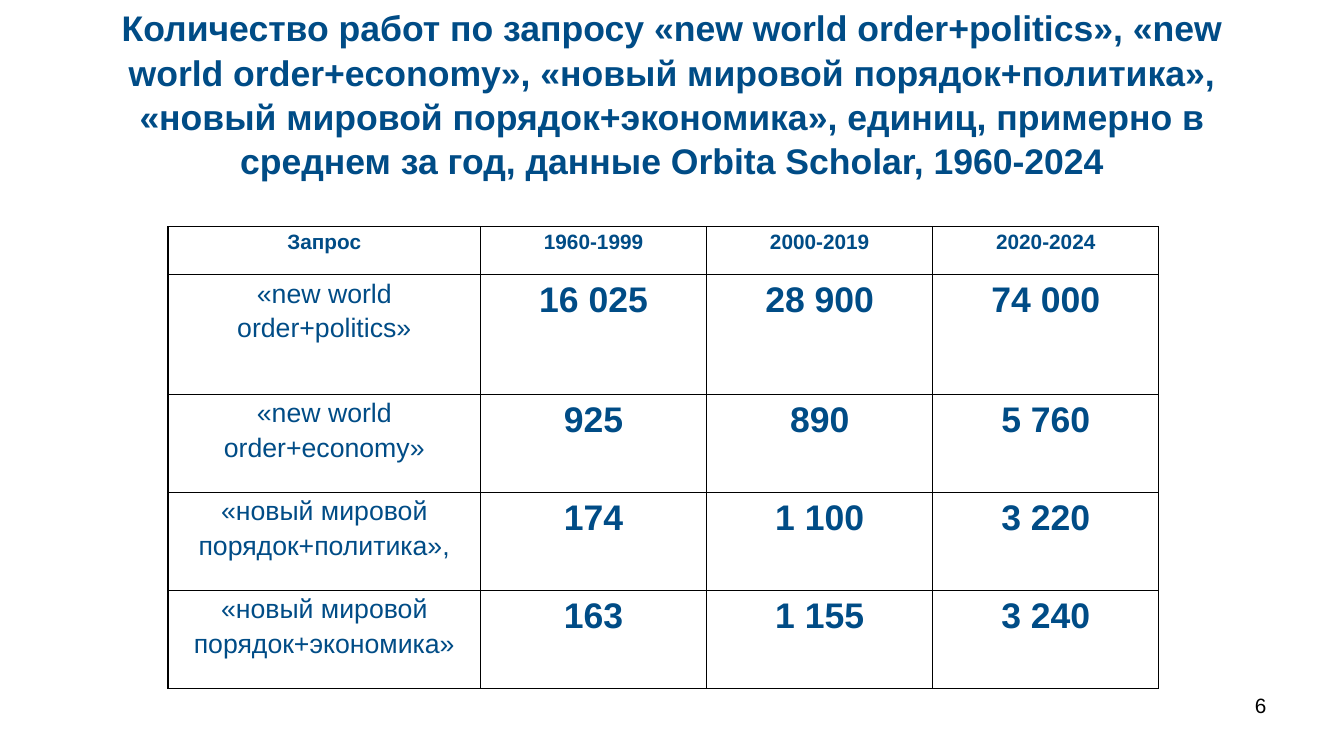
from lxml.etree import SubElement
from pptx import Presentation
from pptx.dml.color import RGBColor
from pptx.enum.text import MSO_ANCHOR, MSO_AUTO_SIZE, PP_ALIGN
from pptx.oxml.ns import qn
from pptx.util import Inches, Pt

COLORS = {"navy": "004C86", "black": "000000"}
FONT = "Arial"
WIDTH, HEIGHT = 12.6, 7.09
MARGIN = WIDTH / 20


def style(paragraph, size, bold, color, align):
    paragraph.alignment = align
    for run in paragraph.runs:
        run.font.name = FONT
        run.font.size = Pt(size)
        run.font.bold = bold
        run.font.color.rgb = RGBColor.from_string(COLORS[color])


def add_borders(cell, color):
    for side in ("a:lnL", "a:lnR", "a:lnT", "a:lnB"):
        line = SubElement(cell._tc.get_or_add_tcPr(), qn(side), w=str(Pt(1)))
        fill = SubElement(line, qn("a:solidFill"))
        SubElement(fill, qn("a:srgbClr"), val=COLORS[color])


prs = Presentation()
prs.slide_width, prs.slide_height = Inches(WIDTH), Inches(HEIGHT)
slide = prs.slides.add_slide(prs.slide_layouts[5])

# Title
title = slide.shapes.title
title.left, title.top = Inches(MARGIN), Inches(HEIGHT * 0.04)
title.width, title.height = Inches(WIDTH - 2 * MARGIN), Inches(HEIGHT / 6)
heading = title.text_frame
heading.text = (
    "Количество работ по запросу «new world order+politics», "
    "«new world order+economy», «новый мировой порядок+политика», "
    "«новый мировой порядок+экономика», единиц, примерно в среднем за год, "
    "данные Orbita Scholar, 1960-2024"
)
heading.word_wrap = True
heading.auto_size = MSO_AUTO_SIZE.NONE
heading.vertical_anchor = MSO_ANCHOR.MIDDLE
heading.paragraphs[0].line_spacing = 1.04
style(heading.paragraphs[0], 24, True, "navy", PP_ALIGN.CENTER)

# Table of yearly averages by query and period
rows = [
    ("Запрос", "1960-1999", "2000-2019", "2020-2024"),
    ("«new world order+politics»", "16 025", "28 900", "74 000"),
    ("«new world order+economy»", "925", "890", "5 760"),
    ("«новый мировой порядок+политика»,", "174", "1 100", "3 220"),
    ("«новый мировой порядок+экономика»", "163", "1 155", "3 240"),
]
column_widths = [2.93] + [2.12] * 3
row_heights = [0.45, 1.12] + [0.92] * 3
works = slide.shapes.add_table(
    len(rows), len(column_widths), Inches(WIDTH / 8), Inches(HEIGHT * 0.3),
    Inches(sum(column_widths)), Inches(sum(row_heights)),
).table
works.first_row = works.horz_banding = False
for column, width in zip(works.columns, column_widths):
    column.width = Inches(width)

for r, (values, height) in enumerate(zip(rows, row_heights)):
    works.rows[r].height = Inches(height)
    for c, value in enumerate(values):
        cell = works.cell(r, c)
        cell.margin_left = cell.margin_right = Inches(0.07)
        cell.margin_top = cell.margin_bottom = 0
        add_borders(cell, "black")
        cell.fill.background()
        cell.text_frame.text = value
        entry = cell.text_frame.paragraphs[0]
        entry.line_spacing = 1.15
        entry.space_after = Pt(8)
        size = 14 if r == 0 else 18 if c == 0 else 24
        style(entry, size, r == 0 or c > 0, "navy", PP_ALIGN.CENTER)

# Page number
number_width = 2.94
page_number = slide.shapes.add_textbox(
    Inches(WIDTH - MARGIN - number_width), Inches(HEIGHT * 0.91),
    Inches(number_width), Inches(HEIGHT * 0.07),
).text_frame
page_number.word_wrap = True
page_number.text = "6"
style(page_number.paragraphs[0], 14, False, "black", PP_ALIGN.RIGHT)

prs.save("out.pptx")
